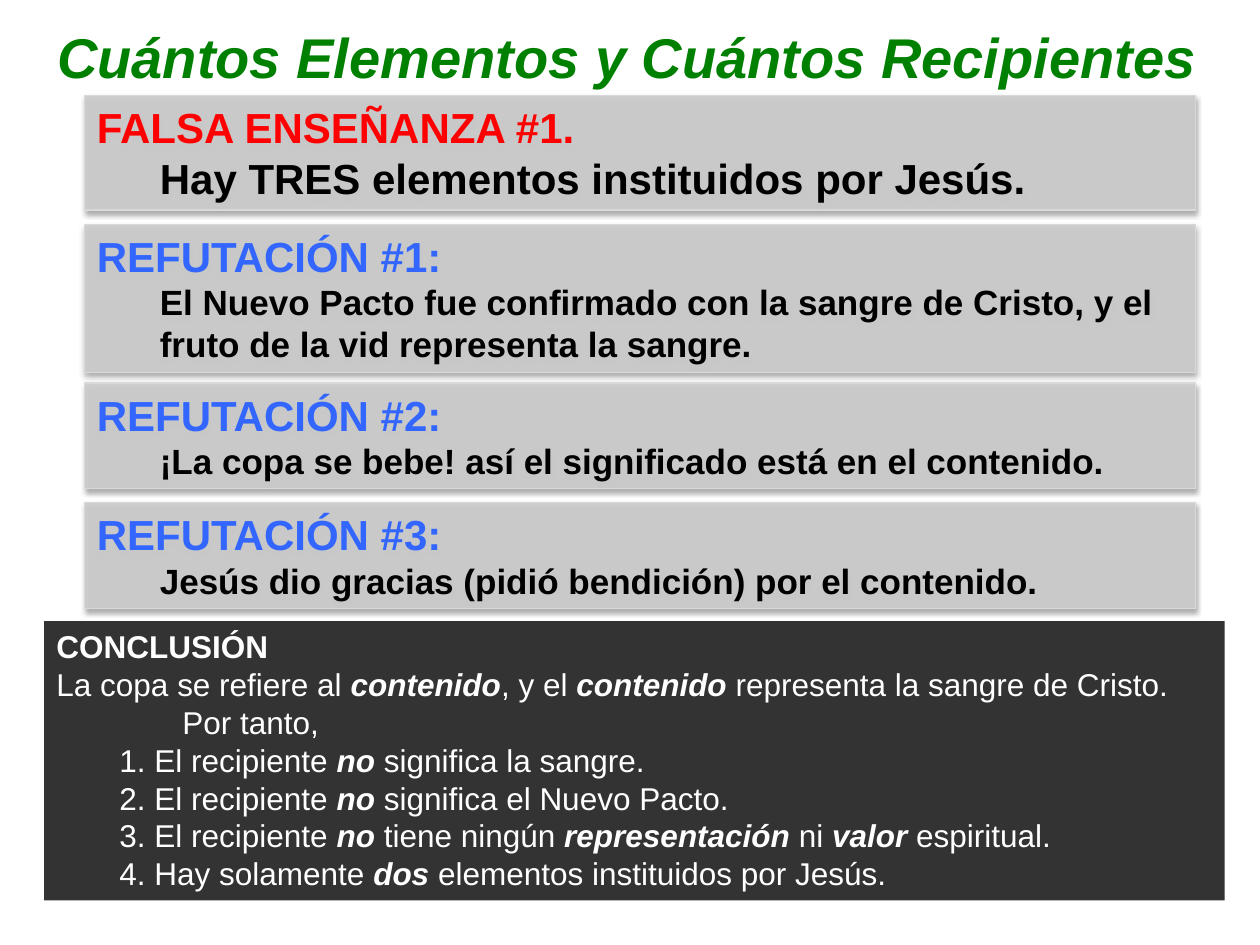
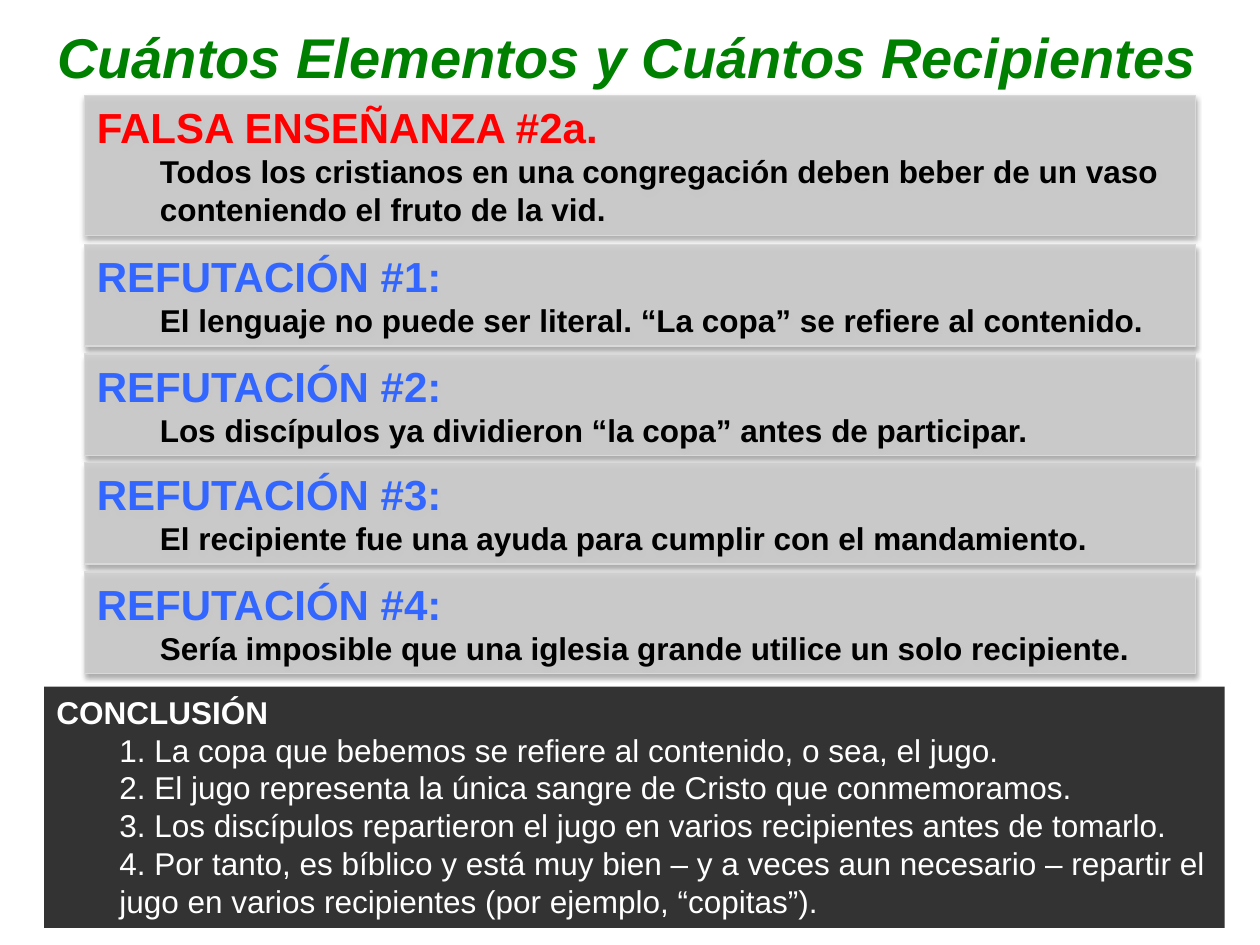
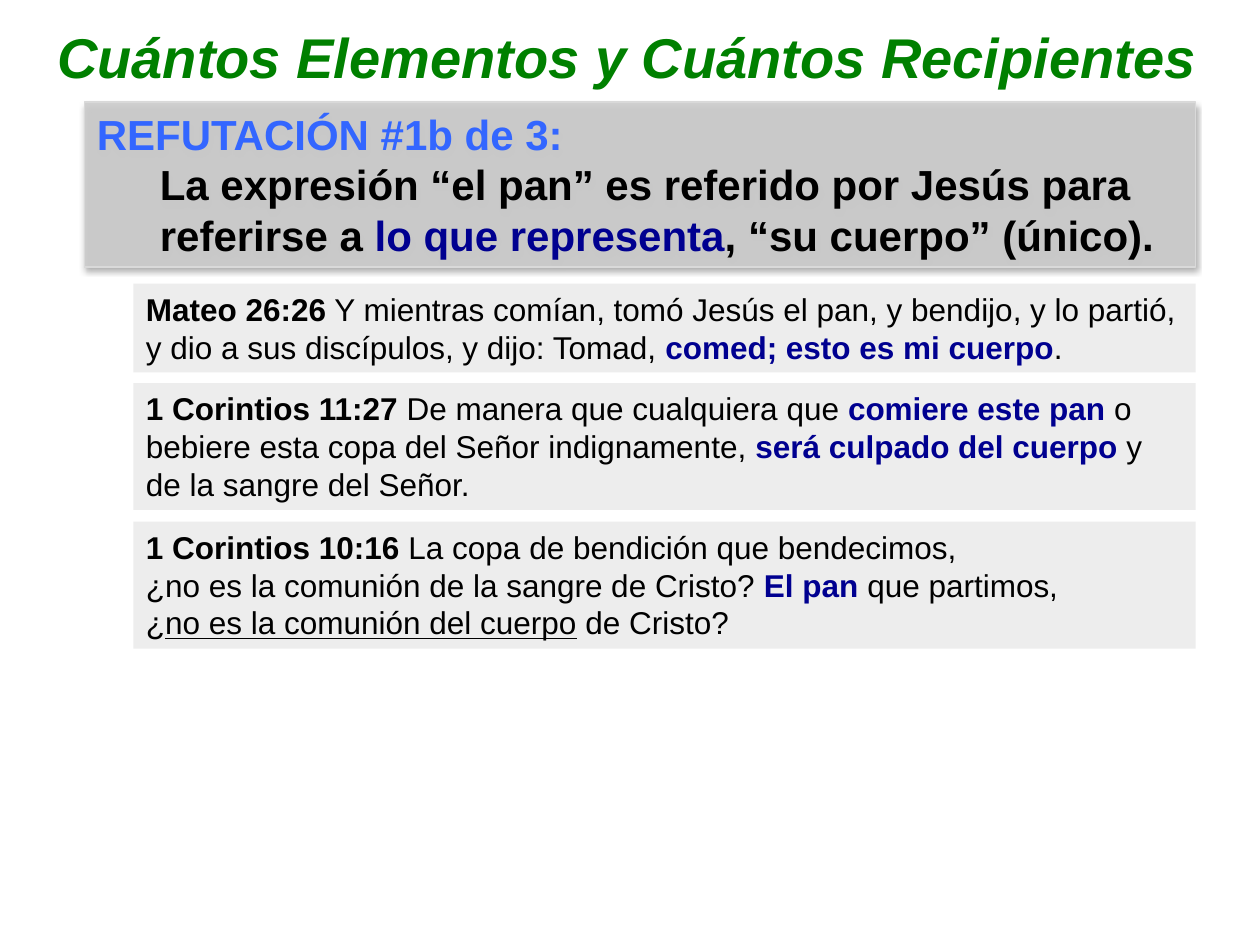
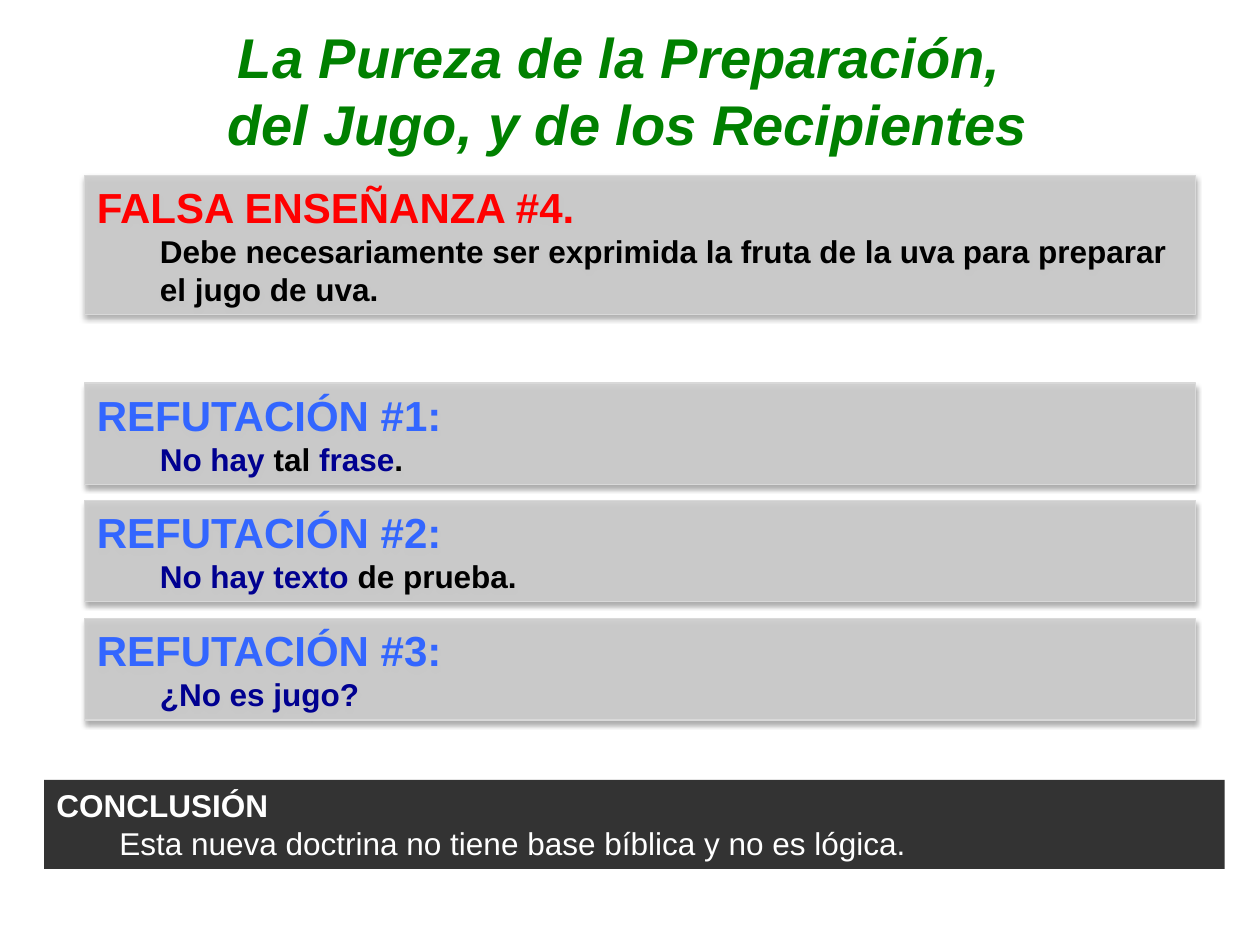
from lxml.etree import SubElement
from pptx import Presentation
from pptx.dml.color import RGBColor
from pptx.enum.shapes import MSO_SHAPE
from pptx.enum.text import MSO_ANCHOR, MSO_AUTO_SIZE, PP_ALIGN
from pptx.oxml.ns import qn
from pptx.util import Inches, Pt

presentation = Presentation()
presentation.slide_width = Inches(10)
presentation.slide_height = Inches(7.5)
COLUMN = presentation.slide_width / 100
ROW = presentation.slide_height / 75
LINE_SPACING = 1.21

GREEN, RED, BLUE, NAVY = "008000", "FF0000", "3366FF", "000090"
BLACK, WHITE = "000000", "FFFFFF"

# Each box style: left and width in columns, fill, opacity in percent.
TITLE_BOX = {"left": 0, "width": 99.6, "fill": None, "align": PP_ALIGN.CENTER}
CARD_BOX = {"left": 6.7, "width": 88.2, "fill": "CCCCCC", "opacity": 90,
            "border": "D9D9D9"}
VERSE_BOX = {"left": 10.6, "width": 84.3, "fill": "D9D9D9", "opacity": 45}
CONCLUSION_BOX = {"left": 3.5, "width": 93.7, "fill": "333333"}

TITLE_FONT = {"size": 32, "color": GREEN, "bold": True, "italic": True, "outline": 0.75}
HEADING_FONT = {"size": 24, "bold": True, "outline": 0.25}
CARD_FONT = {"color": BLACK, "bold": True}
VERSE_FONT = {"size": 18, "color": BLACK, "bold": False}
CONCLUSION_FONT = {"size": 18, "color": WHITE, "bold": False}

STRONG = {"bold": True}
EMPHASIS = {"bold": True, "italic": True}
KEY = {"bold": True, "color": NAVY}
UNDERLINED = {"underline": True}


def rgb(hex_color):
    return RGBColor.from_string(hex_color)


def add_box(slide, style, top, paragraphs):
    """Add a box as high as its paragraphs: (indent, font, line count, runs)."""
    points = sum(font["size"] * lines for _, font, lines, _ in paragraphs)
    place = [round(length) for length in (
        style["left"] * COLUMN, top * ROW, style["width"] * COLUMN,
        Inches(0.1) + Pt(points * LINE_SPACING))]
    if style["fill"]:
        shape = slide.shapes.add_shape(MSO_SHAPE.RECTANGLE, *place)
        shape.shadow.inherit = False
        shape.fill.solid()
        shape.fill.fore_color.rgb = rgb(style["fill"])
        properties = shape._element.spPr
        if "opacity" in style:
            fill_color = properties.find(qn("a:solidFill"))[0]
            SubElement(fill_color, qn("a:alpha"), val=str(style["opacity"] * 1000))
        if "border" in style:
            shape.line.color.rgb = rgb(style["border"])
            shape.line.width = Pt(0.75)
            shadow = SubElement(
                properties.find(qn("a:effectLst")), qn("a:outerShdw"),
                blurRad=str(Pt(3.1)), dist=str(Pt(1.8)), dir="5400000", rotWithShape="0")
            shadow_color = SubElement(shadow, qn("a:srgbClr"), val=BLACK)
            SubElement(shadow_color, qn("a:alpha"), val="35000")
        else:
            shape.line.fill.background()
    else:
        shape = slide.shapes.add_textbox(*place)

    frame = shape.text_frame
    frame.word_wrap = True
    frame.auto_size = MSO_AUTO_SIZE.SHAPE_TO_FIT_TEXT
    frame.vertical_anchor = MSO_ANCHOR.TOP
    for index, (indent, font, _, runs) in enumerate(paragraphs):
        paragraph = frame.add_paragraph() if index else frame.paragraphs[0]
        paragraph.alignment = style.get("align", PP_ALIGN.LEFT)
        if indent:
            paragraph.level = 1
            paragraph_properties = paragraph._p.get_or_add_pPr()
            paragraph_properties.set("marL", str(round(indent * COLUMN)))
            paragraph_properties.set("indent", "0")
        for piece in runs:
            text, change = (piece, {}) if isinstance(piece, str) else piece
            values = {"name": "Arial", **font, **change}
            for number, line in enumerate(text.split("\n")):
                if number:
                    paragraph.add_line_break()
                run = paragraph.add_run()
                run.text = line
                run.font.color.rgb = rgb(values["color"])
                run.font.size = Pt(values["size"])
                for name in ("name", "bold", "italic", "underline"):
                    if name in values:
                        setattr(run.font, name, values[name])
                if "outline" in values:
                    run_properties = run._r.get_or_add_rPr()
                    outline = SubElement(run_properties, qn("a:ln"),
                                         w=str(Pt(values["outline"])))
                    outline_fill = SubElement(outline, qn("a:solidFill"))
                    SubElement(outline_fill, qn("a:srgbClr"), val=BLACK)
                    run_properties.insert(0, outline)


ELEMENTS_TITLE = "Cuántos Elementos y Cuántos Recipientes"

# Cards: top row, heading, body size, body lines, body runs.
# Verses: top row, lines, runs.  Conclusion: top row, then (indent, lines, runs).
slides = [
    {
        "title": ELEMENTS_TITLE,
        "cards": [
            (7.6, "FALSA ENSEÑANZA #1.", 24, 1,
             ["Hay TRES elementos instituidos por Jesús."]),
            (17.8, "REFUTACIÓN #1:", 20, 2,
             ["El Nuevo Pacto fue confirmado con la sangre de Cristo, y el fruto "
              "de la vid representa la sangre."]),
            (30.4, "REFUTACIÓN #2:", 20, 1,
             ["¡La copa se bebe! así el significado está en el contenido."]),
            (39.9, "REFUTACIÓN #3:", 20, 1,
             ["Jesús dio gracias (pidió bendición) por el contenido."]),
        ],
        "conclusion": (49.3, [
            (0, 1, ["La copa se refiere al ", ("contenido", EMPHASIS), ", y el",
                    (" contenido", EMPHASIS), " representa la sangre de Cristo."]),
            (10, 1, ["Por tanto,"]),
            (5, 1, ["1. El recipiente ", ("no", EMPHASIS), " significa la sangre."]),
            (5, 1, ["2. El recipiente ", ("no", EMPHASIS), " significa el Nuevo Pacto."]),
            (5, 1, ["3. El recipiente ", ("no", EMPHASIS), " tiene ningún ",
                    ("representación", EMPHASIS), " ni ", ("valor", EMPHASIS),
                    " espiritual."]),
            (5, 1, ["4. Hay solamente ", ("dos", EMPHASIS),
                    " elementos instituidos por Jesús."]),
        ]),
    },
    {
        "title": ELEMENTS_TITLE,
        "cards": [
            (7.6, "FALSA ENSEÑANZA #2a.", 18, 2,
             ["Todos los cristianos en una congregación deben beber de un vaso "
              "conteniendo el fruto de la vid."]),
            (19.4, "REFUTACIÓN #1:", 18, 1,
             ["El lenguaje no puede ser literal. “La copa” se refiere al contenido."]),
            (28.1, "REFUTACIÓN #2:", 18, 1,
             ["Los discípulos ya dividieron “la copa” antes de participar."]),
            (36.7, "REFUTACIÓN #3:", 18, 1,
             ["El recipiente fue una ayuda para cumplir con el mandamiento."]),
            (45.4, "REFUTACIÓN #4:", 18, 1,
             ["Sería imposible que una iglesia grande utilice un solo recipiente."]),
        ],
        "conclusion": (54.5, [
            (5, 1, ["1. La copa que bebemos se refiere al contenido, o sea, el jugo."]),
            (5, 1, ["2. El jugo representa la única sangre de Cristo que conmemoramos."]),
            (5, 1, ["3. Los discípulos repartieron el jugo en varios recipientes "
                    "antes de tomarlo."]),
            (5, 2, ["4. Por tanto, es bíblico y está muy bien – y a veces aun necesario "
                    "– repartir el jugo en varios recipientes (por ejemplo, “copitas”)."]),
        ]),
    },
    {
        "title": ELEMENTS_TITLE,
        "cards": [
            (8.1, "REFUTACIÓN #1b de 3:", 24, 2,
             ["La expresión “el pan” es referido por Jesús para referirse a ",
              ("lo que representa", KEY), ", “su cuerpo” (único)."]),
        ],
        "verses": [
            (22.5, 2, [("Mateo 26:26", STRONG),
                       " Y mientras comían, tomó Jesús el pan, y bendijo, y lo partió, "
                       "y dio a sus discípulos, y dijo: Tomad, ",
                       ("comed; esto es mi cuerpo", KEY), "."]),
            (30.4, 3, [("1 Corintios 11:27", STRONG), " De manera que cualquiera que ",
                       ("comiere este pan ", KEY),
                       "o bebiere esta copa del Señor indignamente, ",
                       ("será culpado del cuerpo ", KEY), "y de la sangre del Señor."]),
            (41.4, 3, [("1 Corintios 10:16 ", STRONG),
                       "La copa de bendición que bendecimos, \n"
                       "¿no es la comunión de la sangre de Cristo? ",
                       ("El pan ", KEY), "que partimos, \n¿",
                       ("no es la comunión del cuerpo", UNDERLINED), " de Cristo?"]),
        ],
    },
    {
        "title": "La Pureza de la Preparación, \ndel Jugo, y de los Recipientes",
        "cards": [
            (13.9, "FALSA ENSEÑANZA #4.", 18, 2,
             ["Debe necesariamente ser exprimida la fruta de la uva para preparar "
              "el jugo de uva."]),
            (30.4, "REFUTACIÓN #1:", 18, 1,
             [("No hay ", KEY), "tal ", ("frase", KEY), "."]),
            (39.7, "REFUTACIÓN #2:", 18, 1, [("No hay texto ", KEY), "de prueba."]),
            (49.1, "REFUTACIÓN #3:", 18, 1, [("¿No es jugo?", KEY)]),
        ],
        "conclusion": (61.9, [
            (5, 1, ["Esta nueva doctrina no tiene base bíblica y no es lógica."]),
        ]),
    },
]

for content in slides:
    slide = presentation.slides.add_slide(presentation.slide_layouts[6])
    title = content["title"]
    add_box(slide, TITLE_BOX, 1.3, [(0, TITLE_FONT, title.count("\n") + 1, [title])])
    for top, heading, size, lines, runs in content["cards"]:
        heading_color = RED if heading.startswith("FALSA") else BLUE
        add_box(slide, CARD_BOX, top, [
            (0, {**HEADING_FONT, "color": heading_color}, 1, [heading]),
            (5, {**CARD_FONT, "size": size}, lines, runs)])
    for top, lines, runs in content.get("verses", []):
        add_box(slide, VERSE_BOX, top, [(0, VERSE_FONT, lines, runs)])
    if "conclusion" in content:
        top, points = content["conclusion"]
        add_box(slide, CONCLUSION_BOX, top, [
            (0, CONCLUSION_FONT, 1, [("CONCLUSIÓN", STRONG)]),
            *((indent, CONCLUSION_FONT, lines, runs) for indent, lines, runs in points)])

presentation.save("out.pptx")
